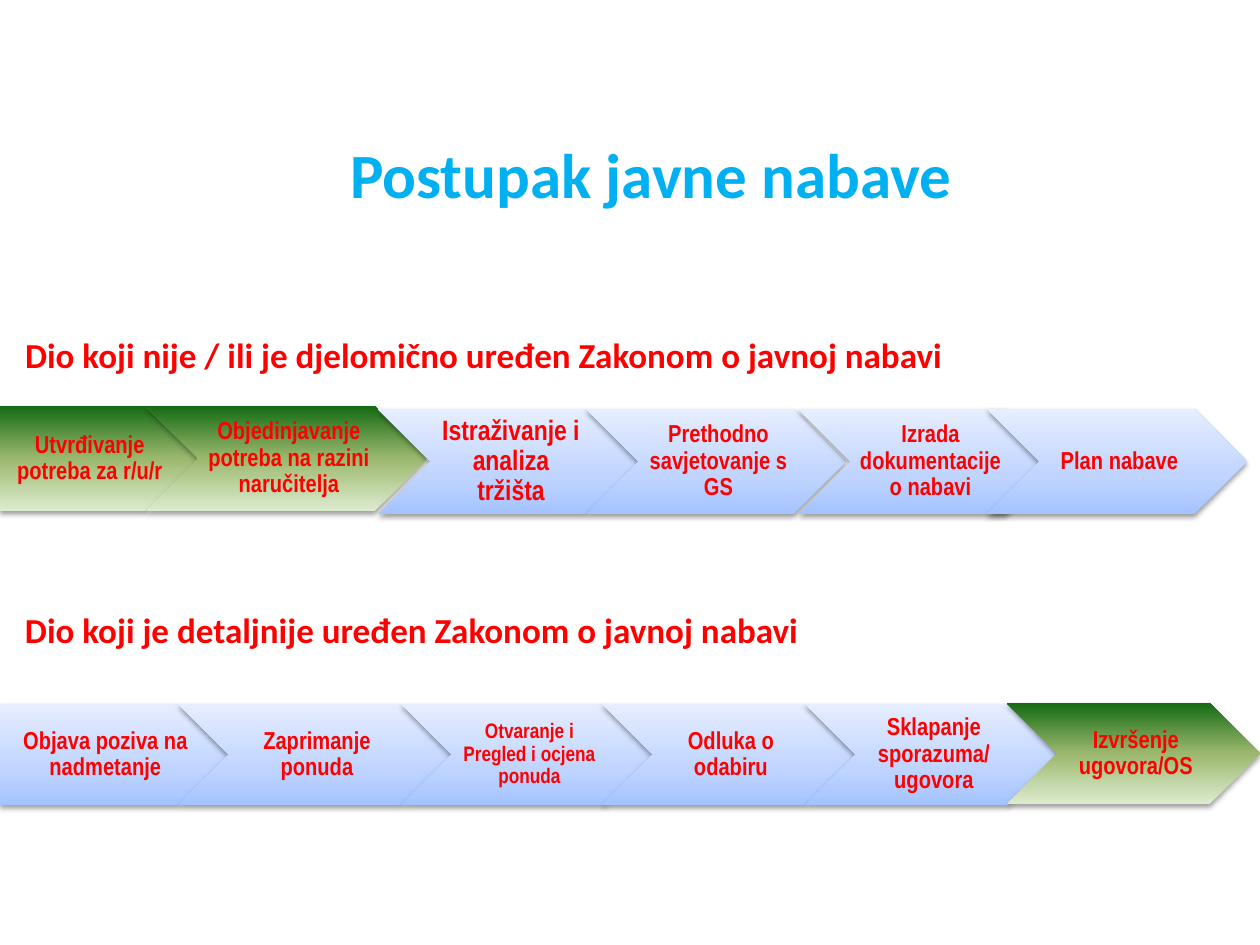
from pptx import Presentation
from pptx.dml.color import RGBColor
from pptx.enum.shapes import MSO_SHAPE as Shape
from pptx.enum.text import MSO_ANCHOR as Anchor, PP_ALIGN as Align
from pptx.oxml import parse_xml
from pptx.oxml.ns import nsdecls
from pptx.util import Emu, Pt

PX = 914400 // 126
RED, WHITE = "FF0000", "FFFFFF"
GREEN = [(0, "DDEBCF"), (50, "9CB86E"), (100, "156B13")]
BLUE = [(0, "A4C4FF"), (35, "BFD4FF"), (100, "E6EEFF")]

TITLE = "Postupak javne nabave"
HEADS = [  # text, box
    ("Dio koji nije / ili je djelomično uređen Zakonom o javnoj nabavi", (25, 334, 1121, 39)),
    ("Dio koji je detaljnije uređen Zakonom o javnoj nabavi", (25, 609, 794, 62)),
]
# height of the row, then its steps: text, left, top, width, colours, text size
ROWS = [
    (105, [
        ("Utvrđivanje potreba za r/u/r", 0, 406, 198, GREEN, 14),
        ("Objedinjavanje potreba na razini naručitelja", 146, 406, 281, GREEN, 14),
        ("Istraživanje i analiza tržišta", 378, 409, 260, BLUE, 16),
        ("Prethodno savjetovanje s GS", 586, 409, 260, BLUE, 14),
        ("Izrada dokumentacije o nabavi", 798, 409, 260, BLUE, 14),
        ("Plan nabave", 987, 409, 260, BLUE, 14),
    ]),
    (101, [
        ("Objava poziva na nadmetanje", 0, 704, 228, BLUE, 14),
        ("Zaprimanje ponuda", 178, 704, 273, BLUE, 14),
        ("Otvaranje i Pregled i ocjena ponuda", 401, 704, 253, BLUE, 12),
        ("Odluka o odabiru", 602, 704, 253, BLUE, 14),
        ("Sklapanje sporazuma/ ugovora", 805, 704, 253, BLUE, 14),
        ("Izvršenje ugovora/OS", 1007, 703, 253, GREEN, 14),
    ]),
]


def rgb(code):
    return RGBColor.from_string(code)


def emu(*nums):
    return [Emu(round(n * PX)) for n in nums]


def write(frame, text, size, face, color, align, insets=(0, 0, 0, 0)):
    frame.word_wrap = True
    (frame.margin_left, frame.margin_top,
     frame.margin_right, frame.margin_bottom) = emu(*insets)
    para = frame.paragraphs[0]
    para.text, para.alignment = text, align
    font = para.font
    font.size, font.name, font.bold = Pt(size), face, True
    font.color.rgb = rgb(color)
    return para


def shade(shape, stops):
    """Fill upwards with a gradient and cast a soft shadow below."""
    marks = "".join(f'<a:gs pos="{pos * 1000}"><a:srgbClr val="{code}"/></a:gs>'
                    for pos, code in stops)
    props = shape._element.spPr
    props.append(parse_xml(
        f'<a:gradFill {nsdecls("a")} rotWithShape="1"><a:gsLst>{marks}</a:gsLst>'
        '<a:lin ang="16200000" scaled="0"/></a:gradFill>'))
    shape.line.fill.background()
    props.append(parse_xml(
        f'<a:effectLst {nsdecls("a")}><a:outerShdw blurRad="40000" dist="20000" '
        'dir="5400000" rotWithShape="0"><a:srgbClr val="000000">'
        '<a:alpha val="38000"/></a:srgbClr></a:outerShdw></a:effectLst>'))


def add_step(group, first, high, text, left, top, wide, stops, size):
    kind = Shape.PENTAGON if first else Shape.CHEVRON
    shade(group.shapes.add_shape(kind, *emu(left, top, wide, high)), stops)
    # The label keeps clear of the notch and the point
    start, cut = (0, high / 4) if first else (high / 2, high)
    box = group.shapes.add_textbox(*emu(left + start, top, wide - cut, high))
    inset = 10 if first else size / 2
    para = write(box.text_frame, text, size, "Arial Narrow", RED, Align.CENTER,
                 (inset, 5, 2, 5))
    para.line_spacing = 0.9
    box.text_frame.vertical_anchor = Anchor.MIDDLE


def main():
    deck = Presentation()
    deck.slide_width, deck.slide_height = emu(1260, 945)
    slide = deck.slides.add_slide(deck.slide_layouts[5])

    title = slide.shapes.title
    title.left, title.top, title.width, title.height = emu(94, 94, 1114, 158)
    write(title.text_frame, TITLE, 36, "Calibri", "00B0F0", Align.CENTER)
    title.text_frame.vertical_anchor = Anchor.MIDDLE

    for high, steps in ROWS:
        group = slide.shapes.add_group_shape()
        for i, step in enumerate(steps):
            add_step(group, i == 0, high, *step)

    for text, box in HEADS:
        head = slide.shapes.add_shape(Shape.RECTANGLE, *emu(*box))
        head.shadow.inherit = False
        head.fill.solid()
        head.fill.fore_color.rgb = rgb(WHITE)
        head.line.fill.background()
        write(head.text_frame, text, 20, "Calibri", RED, Align.LEFT)
        head.text_frame.vertical_anchor = Anchor.TOP

    deck.save("out.pptx")


if __name__ == "__main__":
    main()
